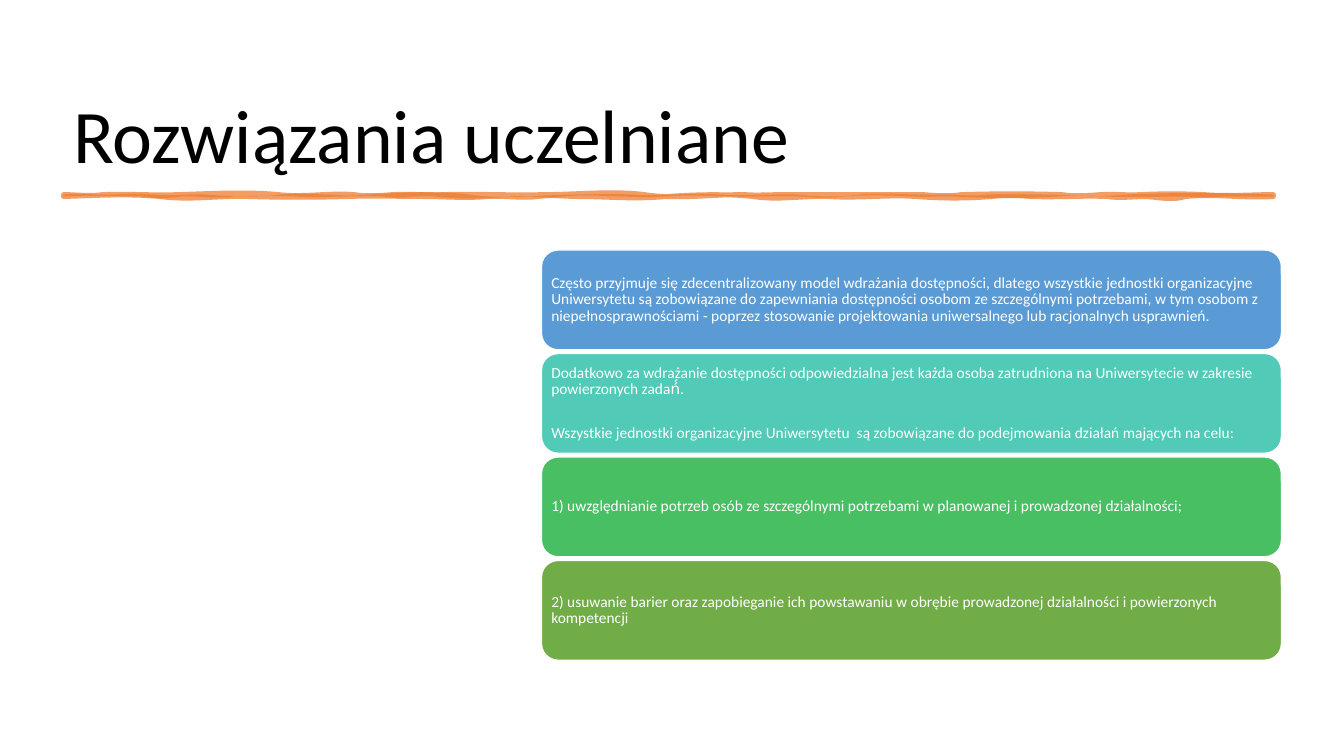
"""Slide listing university accessibility measures under a brush-stroke rule."""
import pptx
import pptx.util
import pptx.dml.color
import pptx.enum.shapes
import pptx.enum.text
from lxml import etree

COLOURS = {
    "title": "000000", "text": "FFFFFF", "brush": "ED7D31",
    "cards": ["5B9BD5", "52CAB8", "49BF64", "70AD47"],
}
Inches, Pt = pptx.util.Inches, pptx.util.Pt
rgb = pptx.dml.color.RGBColor.from_string
qn = pptx.oxml.ns.qn


def add_point(parent, x, y):
    """Append a path point in hundredths of an inch."""
    etree.SubElement(parent, qn("a:pt"), x=str(round(x)), y=str(round(y)))


def add_wavy_edge(outline, start, baseline, waves):
    """Append curves; each wave is its end and two bends in hundredths of an inch."""
    for end, first_bend, second_bend in waves:
        curve = etree.SubElement(outline, qn("a:cubicBezTo"))
        add_point(curve, start + (end - start) / 3, baseline + first_bend)
        add_point(curve, start + (end - start) * 2 / 3, baseline + second_bend)
        add_point(curve, end, baseline)
        start = end


deck = pptx.Presentation()
deck.slide_width, deck.slide_height = Inches(13.33), Inches(7.5)
slide = deck.slides.add_slide(deck.slide_layouts[6])

margin, right_edge = 0.63, 12.71
heading = slide.shapes.add_textbox(
    Inches(margin), Inches(0.26), Inches(right_edge - margin), Inches(1.57)).text_frame
heading.word_wrap = True
heading.vertical_anchor = pptx.enum.text.MSO_ANCHOR.BOTTOM
heading.text = "Rozwiązania uczelniane"
title = heading.paragraphs[0]
title.line_spacing = 0.9
title.font.name, title.font.size = "Calibri", Pt(54)
title.font.color.rgb = rgb(COLOURS["title"])

brush_top, brush_length, brush_depth = 1.93, 1200, 2
brush_layers = [
    ({"fill": "none"},
     [(39, 0, 2), (114, -1, 1), (213, -1, -3), (288, 3, -2), (327, 2, 1), (378, -1, 1),
      (477, -1, 1), (576, 0, -4), (675, 5, 0), (714, 1, 0), (789, 0, 0), (852, 0, 0),
      (891, 1, 2), (990, -1, -1), (1029, 2, 1), (1068, -1, 1), (1131, -1, -1),
      (brush_length, 2, 0)],
     [(1113, 2, -3), (1074, 4, 1), (1035, 0, 2), (960, -1, 1), (921, -1, -2), (846, 2, 2),
      (759, -2, 2), (684, -1, 4), (597, -3, -2), (510, 3, 0), (471, 0, -2), (420, 2, -1),
      (357, 2, 0), (282, 0, -1), (183, 1, 1), (96, -1, 4), (0, -3, -1)]),
    ({"stroke": "0"},
     [(51, -2, 1), (90, -1, -1), (141, 2, -1), (216, 2, 3), (303, -3, 3), (402, -2, -4),
      (501, 5, 1), (564, 0, -1), (651, 2, -2), (726, 2, -1), (789, 2, 3), (876, -2, 1),
      (915, 0, 2), (978, -1, 0), (1053, 1, 3), (brush_length, -2, -2)],
     [(1149, 0, 0), (1110, 1, 1), (1035, 0, 1), (984, -1, -1), (885, 2, 2), (846, -1, 1),
      (771, -1, -2), (732, 2, 1), (681, -1, 0), (594, 0, -2), (495, 2, -3), (444, 3, -2),
      (369, 2, 3), (318, -2, 3), (231, -2, 2), (168, -1, -1), (117, 3, -1), (78, 2, 2),
      (0, -1, -1)]),
]
tracer = slide.shapes.build_freeform(0, 0, scale=Inches(0.01))
tracer.add_line_segments([(brush_length, 0), (brush_length, brush_depth), (0, brush_depth)])
brush = tracer.convert_to_shape(Inches(margin), Inches(brush_top))
brush.shadow.inherit = False
outlines = brush._element.spPr.find(".//" + qn("a:pathLst"))
outlines.remove(outlines[0])
for paint_mode, upper_waves, lower_waves in brush_layers:
    outline = etree.SubElement(
        outlines, qn("a:path"), w=str(brush_length), h=str(brush_depth), **paint_mode)
    add_point(etree.SubElement(outline, qn("a:moveTo")), 0, 0)
    add_wavy_edge(outline, 0, 0, upper_waves)
    add_point(etree.SubElement(outline, qn("a:lnTo")), brush_length, brush_depth)
    add_wavy_edge(outline, brush_length, brush_depth, lower_waves)
    etree.SubElement(outline, qn("a:close"))
brush.line.width = Pt(3.5)
for paint in (brush.fill, brush.line.fill):
    paint.solid()
    paint.fore_color.rgb = rgb(COLOURS["brush"])
for tint in brush._element.spPr.iter(qn("a:srgbClr")):
    etree.SubElement(tint, qn("a:alpha"), val="75000")

measures = [
    ["Często przyjmuje się zdecentralizowany model wdrażania dostępności, dlatego wszystkie "
     "jednostki organizacyjne Uniwersytetu są zobowiązane do zapewniania dostępności osobom ze "
     "szczególnymi potrzebami, w tym osobom z niepełnosprawnościami - poprzez stosowanie "
     "projektowania uniwersalnego lub racjonalnych usprawnień."],
    ["Dodatkowo za wdrażanie dostępności odpowiedzialna jest każda osoba zatrudniona na "
     "Uniwersytecie w zakresie powierzonych zadań́.",
     "Wszystkie jednostki organizacyjne Uniwersytetu  są zobowiązane do podejmowania działań "
     "mających na celu:"],
    ["1) uwzględnianie potrzeb osób ze szczególnymi potrzebami w planowanej i prowadzonej "
     "działalności;"],
    ["2) usuwanie barier oraz zapobieganie ich powstawaniu w obrębie prowadzonej działalności "
     "i powierzonych kompetencji"],
]
card_left, card_top, last_card_top, card_height = 5.37, 2.48, 5.56, 0.99
card_pitch = (last_card_top - card_top) / (len(measures) - 1)
for row, (statements, colour) in enumerate(zip(measures, COLOURS["cards"])):
    card = slide.shapes.add_shape(
        pptx.enum.shapes.MSO_SHAPE.ROUNDED_RECTANGLE,
        Inches(card_left), Inches(card_top + row * card_pitch),
        Inches(right_edge - card_left), Inches(card_height))
    card.shadow.inherit = False
    card.fill.solid()
    card.fill.fore_color.rgb = rgb(colour)
    card.line.color.rgb = rgb(COLOURS["text"])
    card.line.width = Pt(1)
    body = card.text_frame
    body.word_wrap = True
    body.vertical_anchor = pptx.enum.text.MSO_ANCHOR.MIDDLE
    body.margin_left = body.margin_right = body.margin_top = body.margin_bottom = Inches(0.05)
    body.text = "\n".join(statements)
    for statement in body.paragraphs:
        statement.alignment = pptx.enum.text.PP_ALIGN.LEFT
        statement.line_spacing = 0.9
        statement.font.name, statement.font.size = "Calibri", Pt(11)
        statement.font.color.rgb = rgb(COLOURS["text"])
    for statement in body.paragraphs[:-1]:
        statement.space_after = Pt(19.5)

deck.save("out.pptx")
